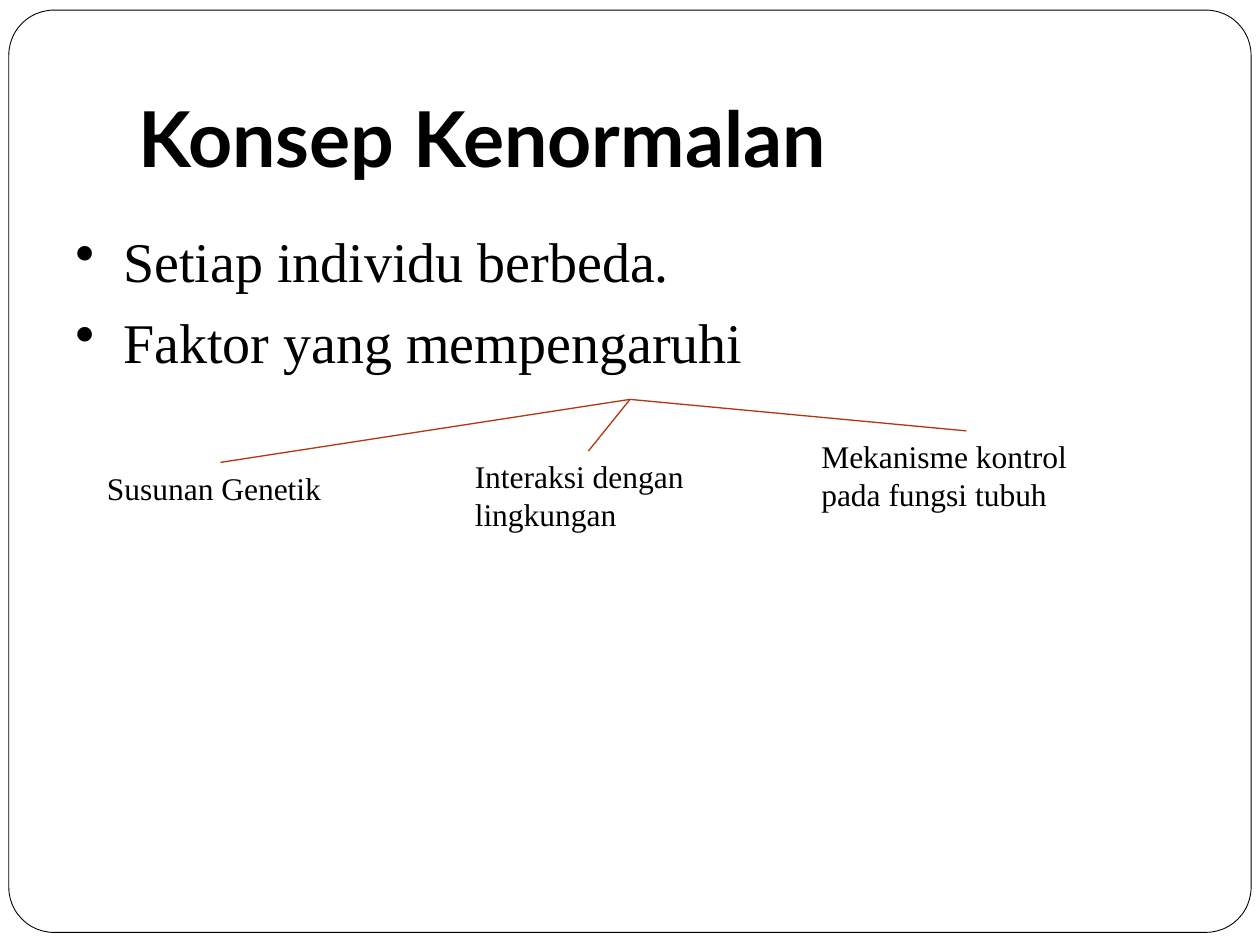
import pptx
import pptx.util
import pptx.dml.color
import pptx.enum.shapes
import pptx.enum.text
import pptx.oxml
import pptx.oxml.ns
from pptx.util import Inches

BLACK = pptx.dml.color.RGBColor(0x00, 0x00, 0x00)
WHITE = pptx.dml.color.RGBColor(0xFF, 0xFF, 0xFF)
RUST = pptx.dml.color.RGBColor(0xB1, 0x36, 0x0B)
ANCHOR = pptx.enum.text.MSO_ANCHOR


class SlideBuilder:
    heading_font = "Lato"
    body_font = "Times New Roman"

    def __init__(self, slide):
        self.s = slide

    def frame(self, left, top, width, height, adjustment):
        sp = self.s.shapes.add_shape(
            pptx.enum.shapes.MSO_SHAPE.ROUNDED_RECTANGLE,
            Inches(left), Inches(top), Inches(width), Inches(height))
        sp.adjustments[0] = adjustment
        sp.shadow.inherit = False
        sp.fill.solid()
        sp.fill.fore_color.rgb = WHITE
        sp.line.color.rgb = BLACK
        sp.line.width = pptx.util.Pt(0.5)

    def text(self, left, top, width, height, lines, size, font=body_font,
             bold=False, anchor=ANCHOR.TOP, bottom=0.05):
        """Add a text box with one paragraph per line and return its frame."""
        sp = self.s.shapes.add_textbox(
            Inches(left), Inches(top), Inches(width), Inches(height))
        tf = sp.text_frame
        tf.word_wrap = True
        tf.vertical_anchor = anchor
        tf.margin_bottom = Inches(bottom)
        for i, line in enumerate(lines):
            p = tf.paragraphs[0] if i == 0 else tf.add_paragraph()
            r = p.add_run()
            r.text = line
            r.font.name = font
            r.font.size = pptx.util.Pt(size)
            r.font.bold = bold
            r.font.color.rgb = BLACK
        return tf

    def bullets(self, left, top, width, height, lines, size):
        tf = self.text(left, top, width, height, lines, size)
        for p in tf.paragraphs:
            p.space_before = pptx.util.Pt(7.5)
            pPr = p._p.get_or_add_pPr()
            pPr.set("marL", str(Inches(0.38)))
            pPr.set("indent", str(Inches(-0.38)))
            bullet = pptx.oxml.parse_xml(
                '<a:buChar %s char="•"/>' % pptx.oxml.ns.nsdecls("a"))
            pPr.append(bullet)

    def line(self, start, end):
        c = self.s.shapes.add_connector(
            pptx.enum.shapes.MSO_CONNECTOR.STRAIGHT,
            *[Inches(v) for v in start + end])
        c.line.color.rgb = RUST
        c.line.width = pptx.util.Pt(0.75)
        c._element.spPr.append(pptx.oxml.parse_xml(
            "<a:effectLst %s/>" % pptx.oxml.ns.nsdecls("a")))


def main():
    prs = pptx.Presentation()
    prs.slide_width = Inches(10)
    prs.slide_height = Inches(7.5)
    b = SlideBuilder(prs.slides.add_slide(prs.slide_layouts[6]))

    b.frame(0.07, 0.08, 9.86, 7.32, 0.049)
    b.text(1, 0.3, 8.5, 1.25, ["Konsep Kenormalan"], 44,
           font=b.heading_font, bold=True, anchor=ANCHOR.BOTTOM, bottom=0.1)
    b.bullets(0.5, 1.75, 9, 1.42,
              ["Setiap individu berbeda.", "Faktor yang mempengaruhi"], 32)

    # Each factor: label, left, top, width, height, x where its branch ends
    factors = [
        ("Susunan Genetik", 0.75, 3.67, 2, 0.4, 1.75),
        ("Interaksi dengan lingkungan", 3.67, 3.58, 2, 0.71, 4.67),
        ("Mekanisme kontrol pada fungsi tubuh", 6.42, 3.42, 2.5, 0.71, 7.67),
    ]
    for label, left, top, width, height, branch_x in factors:
        b.text(left, top, width, height, [label], 18)
        b.line((5, 3.17), (branch_x, top))

    prs.save("out.pptx")


if __name__ == "__main__":
    main()
